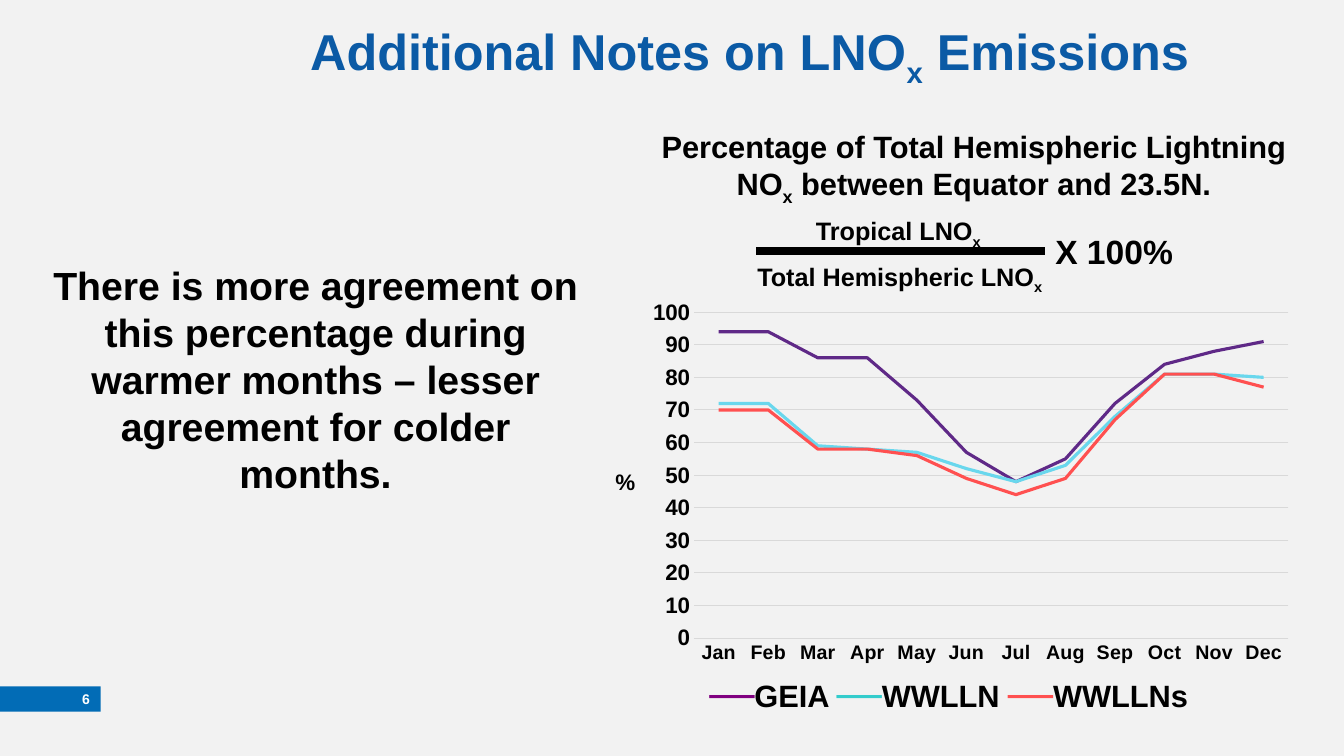
from lxml import etree
from pptx import Presentation
from pptx import util as u
from pptx.chart.data import CategoryChartData
from pptx.dml.color import RGBColor
from pptx.enum import chart as ch, shapes, text
from pptx.oxml import parse_xml
from pptx.oxml.ns import nsdecls, qn

INK = {"page": "F2F2F2", "blue": "026CB6", "head": "0B5AA5", "text": "000000",
       "white": "FFFFFF", "grid": "D9D9D9"}
MID = text.PP_ALIGN.CENTER


def style(font, size, ink, face="Arial"):
    form = {"name": face, "size": u.Pt(size), "bold": True}
    for key, val in form.items():
        setattr(font, key, val)
    font.color.rgb = RGBColor.from_string(ink)


def write(at, parts, align=MID):
    """Add a text box; each part is (words, size, colour, face, baseline)."""
    box = slide.shapes.add_textbox(*map(u.Inches, at))
    box.text_frame.word_wrap = True
    para = box.text_frame.paragraphs[0]
    para.alignment = align
    for words, size, ink, face, base in parts:
        run = para.add_run()
        run.text = words
        style(run.font, size, ink, face)
        if base:
            run.font._element.set("baseline", str(base))
    return box.text_frame


deck = Presentation()
deck.slide_width, deck.slide_height = u.Inches(13.33), u.Inches(7.5)
slide = deck.slides.add_slide(deck.slide_layouts[6])
back = slide.background.fill
back.solid()
back.fore_color.rgb = RGBColor.from_string(INK["page"])

# Page number on its bar
bar = slide.shapes.add_shape(shapes.MSO_SHAPE.RECTANGLE, 0, u.Inches(6.81),
                             u.Inches(1), u.Inches(0.25))
bar.shadow.inherit = False
bar.fill.solid()
bar.fill.fore_color.rgb = RGBColor.from_string(INK["blue"])
bar.line.fill.background()
num = write((0, 6.81, 0.89, 0.25), [("6", 10, INK["white"], "Arial", 0)],
            text.PP_ALIGN.RIGHT)
num.vertical_anchor = text.MSO_ANCHOR.MIDDLE
for side in ("left", "top", "right", "bottom"):
    setattr(num, "margin_" + side, 0)

# Chart data: name, line colour, legend colour, values
lines = [
    ("GEIA", "5F2987", "800080", (94, 94, 86, 86, 73, 57, 48, 55, 72, 84, 88, 91)),
    ("WWLLN", "69D7ED", "33CCCC", (72, 72, 59, 58, 57, 52, 48, 53, 68, 81, 81, 80)),
    ("WWLLNs", "FF5050", "FF5050", (70, 70, 58, 58, 56, 49, 44, 49, 67, 81, 81, 77)),
]
data = CategoryChartData()
data.categories = "Jan Feb Mar Apr May Jun Jul Aug Sep Oct Nov Dec".split()
for name, ink, key, vals in lines:
    data.add_series(name, vals)
chart = slide.shapes.add_chart(ch.XL_CHART_TYPE.LINE, u.Inches(5.9), u.Inches(2.91),
                               u.Inches(7.02), u.Inches(3.76), data).chart
chart.has_title = chart.has_legend = False
style(chart.font, 10, INK["text"])
chart.plots[0].vary_by_categories = False
for line, (name, ink, key, vals) in zip(chart.plots[0].series, lines):
    line.smooth = False
    line.marker.style = ch.XL_MARKER_STYLE.NONE
    line.format.line.width = u.Pt(2.25)
    line.format.line.color.rgb = RGBColor.from_string(ink)

# Axes
months, share = chart.category_axis, chart.value_axis
for axis, size in ((months, 14), (share, 16)):
    axis.major_tick_mark = axis.minor_tick_mark = ch.XL_TICK_MARK.NONE
    style(axis.tick_labels.font, size, INK["text"])
share.minimum_scale, share.maximum_scale, share.major_unit = 0, 100, 10
share.has_major_gridlines = True
for rule in (months.format.line, share.major_gridlines.format.line):
    rule.width = u.Pt(0.75)
    rule.color.rgb = RGBColor.from_string(INK["grid"])
share.format.line.fill.background()
label = share.axis_title.text_frame
label.text = "%"
style(label.paragraphs[0].runs[0].font, 16, INK["text"])
label._txBody.find(qn("a:bodyPr")).set("rot", "0")

# Plot area as shares of the chart frame
plot = chart._chartSpace.chart.plotArea
for old in plot.findall(qn("c:layout")):
    plot.remove(old)
spots = "".join(f'<c:{tag} val="{val}"/>' for tag, val in (
    ("layoutTarget", "inner"), ("xMode", "edge"), ("yMode", "edge"),
    ("x", 0.14), ("y", 0.05), ("w", 0.84), ("h", 0.86)))
plot.insert(0, parse_xml(f'<c:layout {nsdecls("c")}><c:manualLayout>{spots}'
                         '</c:manualLayout></c:layout>'))

# Legend
parts = []
for name, ink, key, vals in lines:
    gap = "" if name == lines[-1][0] else " "
    parts += [("—", 32, key, "Times New Roman", 0),
              (name + gap, 22, INK["text"], "Arial", 0)]
write((6.76, 6.53, 5.3, 0.64), parts)

# Title, notes and formula; the middle string is a subscript
notes = [
    ((1.77, 0.15, 11.33, 0.75), 36, "head",
     ("Additional Notes on LNO", "x", " Emissions")),
    ((0.36, 2.54, 5.54, 2.46), 28, "text",
     ("There is more agreement on this percentage during warmer months – "
      "lesser agreement for colder months.",)),
    ((6.44, 1.22, 6.44, 0.84), 22, "text",
     ("Percentage of Total Hemispheric Lightning NO", "x",
      " between Equator and 23.5N.")),
    ((7.64, 2.09, 2.54, 0.4), 18, "text", ("Tropical LNO", "x")),
    ((7.37, 2.54, 3.11, 0.4), 18, "text", ("Total Hemispheric LNO", "x")),
    ((9.96, 2.24, 2.18, 0.5), 24, "text", ("X 100%",)),
]
for at, size, ink, words in notes:
    write(at, [(word, size, INK[ink], "Arial", -25000 if word == "x" else 0)
               for word in words])

# Fraction bar
frac = slide.shapes.add_connector(shapes.MSO_CONNECTOR.STRAIGHT, u.Inches(7.5),
                                  u.Inches(2.49), u.Inches(10.36), u.Inches(2.49))
frac.line.width = u.Pt(6)
frac.line.color.rgb = RGBColor.from_string(INK["text"])
etree.SubElement(frac._element.spPr, qn("a:effectLst"))

deck.save("out.pptx")
